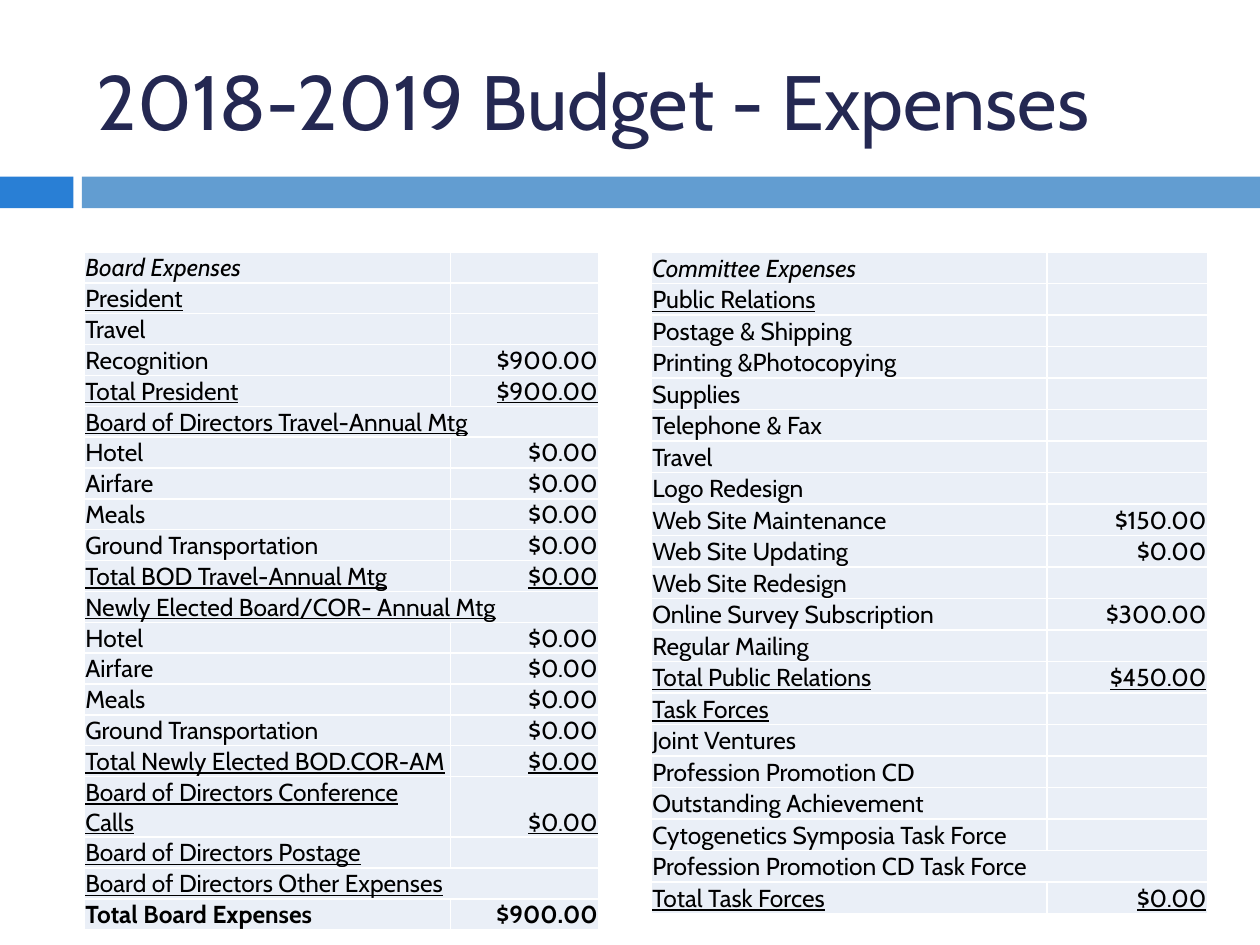
from dataclasses import dataclass

from pptx import Presentation
from pptx.dml.color import RGBColor
from pptx.enum.shapes import MSO_SHAPE
from pptx.enum.text import MSO_ANCHOR, MSO_AUTO_SIZE, PP_ALIGN
from pptx.util import Cm, Pt


@dataclass(frozen=True)
class Theme:
    face: str = "Cabin"
    title_size: int = 44
    cell_size: int = 14
    title: str = "242852"
    text: str = "000000"
    cell: str = "EAEFF7"
    accent: str = "297FD5"
    band: str = "629DD1"


THEME = Theme()

PLAIN, HEADING, UNDERLINED, GRAND_TOTAL = range(4)
SPAN = None  # in place of an amount: the label runs across both columns

TRAVEL_COSTS = [(label, "$0.00", PLAIN) for label in
                ("Hotel", "Airfare", "Meals", "Ground Transportation")]

BOARD = [
    ("Board Expenses", "", HEADING),
    ("President", "", UNDERLINED),
    ("Travel", "", PLAIN),
    ("Recognition", "$900.00", PLAIN),
    ("Total President", "$900.00", UNDERLINED),
    ("Board of Directors Travel-Annual Mtg", SPAN, UNDERLINED),
    *TRAVEL_COSTS,
    ("Total BOD Travel-Annual Mtg", "$0.00", UNDERLINED),
    ("Newly Elected Board/COR- Annual Mtg", SPAN, UNDERLINED),
    *TRAVEL_COSTS,
    ("Total Newly Elected BOD.COR-AM", "$0.00", UNDERLINED),
    ("Board of Directors Conference Calls", "$0.00", UNDERLINED),
    ("Board of Directors Postage", "", UNDERLINED),
    ("Board of Directors Other Expenses", SPAN, UNDERLINED),
    ("Total Board Expenses", "$900.00", GRAND_TOTAL),
]

COMMITTEE = [
    ("Committee Expenses", "", HEADING),
    ("Public Relations", "", UNDERLINED),
    ("Postage & Shipping", "", PLAIN),
    ("Printing &Photocopying", "", PLAIN),
    ("Supplies", "", PLAIN),
    ("Telephone & Fax", "", PLAIN),
    ("Travel", "", PLAIN),
    ("Logo Redesign", "", PLAIN),
    ("Web Site Maintenance", "$150.00", PLAIN),
    ("Web Site Updating", "$0.00", PLAIN),
    ("Web Site Redesign", "", PLAIN),
    ("Online Survey Subscription", "$300.00", PLAIN),
    ("Regular Mailing", "", PLAIN),
    ("Total Public Relations", "$450.00", UNDERLINED),
    ("Task Forces", "", UNDERLINED),
    ("Joint Ventures", "", PLAIN),
    ("Profession Promotion CD", "", PLAIN),
    ("Outstanding Achievement", "", PLAIN),
    ("Cytogenetics Symposia Task Force", "", PLAIN),
    ("Profession Promotion CD Task Force", SPAN, PLAIN),
    ("Total Task Forces", "$0.00", UNDERLINED),
]


def set_font(paragraph, size, color):
    font = paragraph.font
    font.name = THEME.face
    font.size = Pt(size)
    font.color.rgb = RGBColor.from_string(color)
    return font


def add_bar(slide, left, width, color):
    bar = slide.shapes.add_shape(
        MSO_SHAPE.RECTANGLE, Cm(left), Cm(3.56), Cm(width), Cm(0.64))
    bar.shadow.inherit = False
    bar.fill.solid()
    bar.fill.fore_color.rgb = RGBColor.from_string(color)
    bar.line.fill.background()


def set_title(slide, wording):
    title = slide.shapes.title
    title.left, title.top = Cm(1.7), Cm(0.64)
    title.width, title.height = Cm(22.66), Cm(2.74)
    frame = title.text_frame
    frame.text = wording
    frame.auto_size = MSO_AUTO_SIZE.NONE
    frame.vertical_anchor = MSO_ANCHOR.MIDDLE
    heading = frame.paragraphs[0]
    heading.alignment = PP_ALIGN.LEFT
    set_font(heading, THEME.title_size, THEME.title)


def fill_cell(cell, wording, role, alignment):
    cell.fill.solid()
    cell.fill.fore_color.rgb = RGBColor.from_string(THEME.cell)
    cell.margin_left = cell.margin_right = cell.margin_top = Cm(0.02)
    cell.margin_bottom = 0
    cell.vertical_anchor = MSO_ANCHOR.BOTTOM
    cell.text = wording
    entry = cell.text_frame.paragraphs[0]
    entry.alignment = alignment
    font = set_font(entry, THEME.cell_size, THEME.text)
    font.italic = role == HEADING
    font.underline = role == UNDERLINED
    font.bold = role == GRAND_TOTAL


def add_budget(slide, entries, left, column_widths, row_height):
    budget = slide.shapes.add_table(
        len(entries), 2, Cm(left), Cm(5.08),
        Cm(sum(column_widths)), Cm(row_height * len(entries))).table
    budget.first_row = budget.horz_banding = False
    for column, width in zip(budget.columns, column_widths):
        column.width = Cm(width)
    for index, (label, amount, role) in enumerate(entries):
        budget.rows[index].height = Cm(row_height)
        label_cell, amount_cell = budget.cell(index, 0), budget.cell(index, 1)
        fill_cell(label_cell, label, role, PP_ALIGN.LEFT)
        fill_cell(amount_cell, amount or "", role, PP_ALIGN.RIGHT)
        if amount is SPAN:
            label_cell.merge(amount_cell)


def main():
    deck = Presentation()
    deck.slide_width, deck.slide_height = Cm(25.4), Cm(19.05)
    slide = deck.slides.add_slide(deck.slide_layouts[5])
    add_bar(slide, 0, 1.48, THEME.accent)
    add_bar(slide, 1.65, 23.75, THEME.band)
    set_title(slide, "2018-2019 Budget - Expenses")
    add_budget(slide, BOARD, 1.7, (7.38, 2.99), 0.54)
    add_budget(slide, COMMITTEE, 13.13, (7.98, 3.23), 0.635)
    deck.save("out.pptx")


if __name__ == "__main__":
    main()
